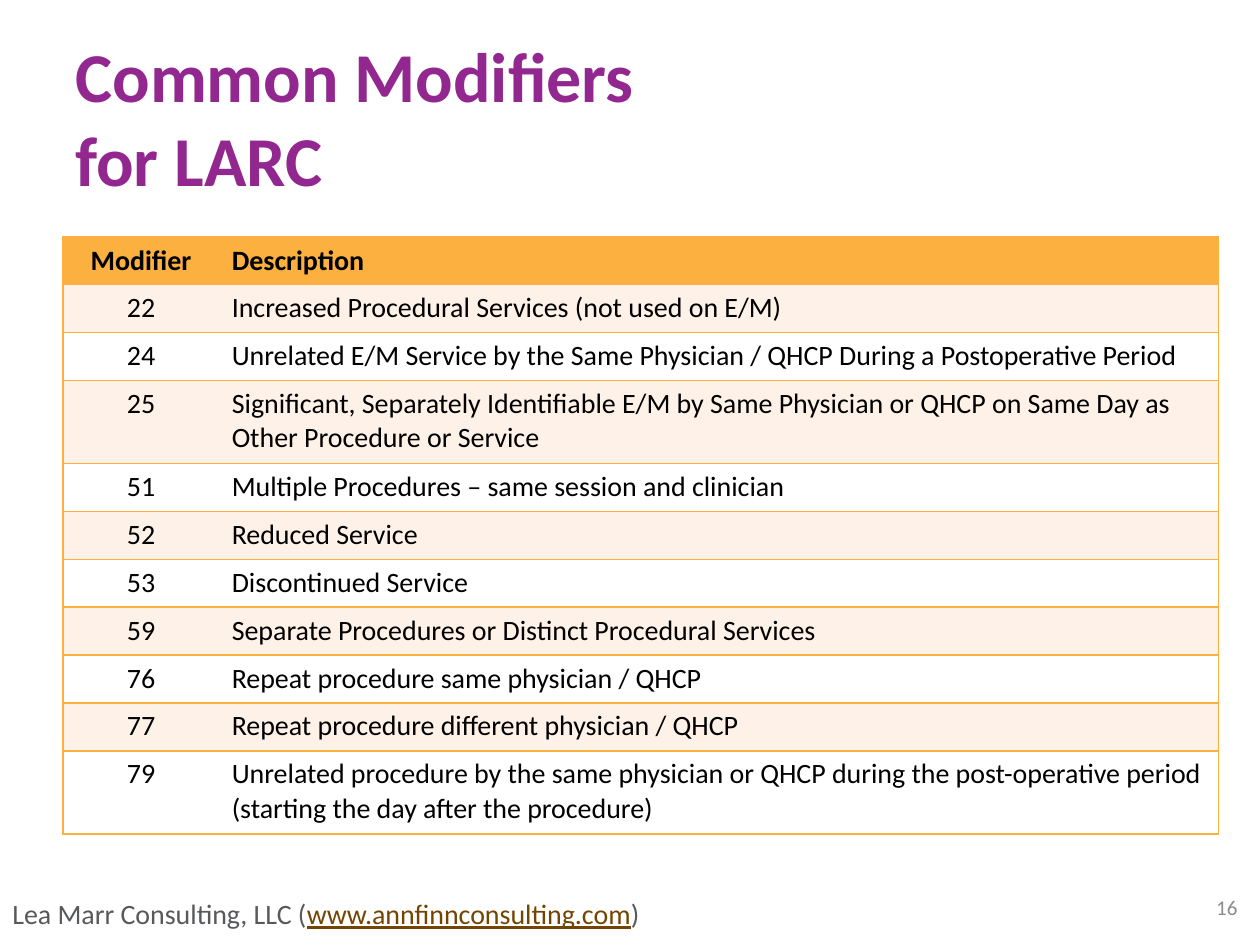
"""Build the slide listing common billing modifiers for LARC."""
from dataclasses import dataclass

from lxml import etree
from pptx import Presentation, util as u
from pptx.dml.color import RGBColor
from pptx.enum import text
from pptx.oxml.ns import qn


@dataclass(frozen=True)
class Theme:
    font: str = "Calibri"
    title: str = "92278F"
    accent: str = "FBB040"
    band: str = "FEF2E8"
    plain: str = "FFFFFF"
    ink: str = "000000"
    footer: str = "58595B"
    link: str = "734502"
    number: str = "8C8C8C"
    title_size: int = 40
    body_size: int = 16
    number_size: int = 12


theme = Theme()


def style(p, size, color, bold=False, align=text.PP_ALIGN.LEFT):
    p.alignment = align
    p.font.name = theme.font
    p.font.size = u.Pt(size)
    p.font.bold = bold
    p.font.color.rgb = RGBColor.from_string(color)


def add_text(left, top, width, height):
    tf = s.shapes.add_textbox(*map(u.Inches, (left, top, width, height))).text_frame
    tf.word_wrap = True
    tf.vertical_anchor = text.MSO_ANCHOR.MIDDLE
    return tf.paragraphs[0]


prs = Presentation()
prs.slide_width, prs.slide_height = u.Inches(10), u.Inches(7.5)
s = prs.slides.add_slide(prs.slide_layouts[6])

p = add_text(0.5, 0.3, 5.42, 1.25)
p.text = "Common Modifiers\vfor LARC"
style(p, theme.title_size, theme.title, bold=True)

rows = [
    ("Modifier", "Description"),
    ("22", "Increased Procedural Services (not used on E/M)"),
    ("24", "Unrelated E/M Service by the Same Physician / QHCP During a Postoperative Period"),
    ("25", "Significant, Separately Identifiable E/M by Same Physician or QHCP on Same Day as Other Procedure or Service"),
    ("51", "Multiple Procedures – same session and clinician"),
    ("52", "Reduced Service"),
    ("53", "Discontinued Service"),
    ("59", "Separate Procedures or Distinct Procedural Services"),
    ("76", "Repeat procedure same physician / QHCP"),
    ("77", "Repeat procedure different physician / QHCP"),
    ("79", "Unrelated procedure by the same physician or QHCP during the post-operative period (starting the day after the procedure)"),
]
two_line_rows = ("25", "79")
aligns = (text.PP_ALIGN.CENTER, text.PP_ALIGN.LEFT)
inner_edges = ("lnR", "lnL")

table = s.shapes.add_table(
    len(rows), 2, u.Inches(0.5), u.Inches(1.88), u.Inches(9.17), u.Inches(4.79)
).table
table.first_row = table.horz_banding = False
for column, width in zip(table.columns, (1.24, 7.93)):
    column.width = u.Inches(width)

for i, row in enumerate(rows):
    header = i == 0
    fill = theme.accent if header else theme.band if i % 2 else theme.plain
    table.rows[i].height = u.Inches(0.66 if row[0] in two_line_rows else 0.38)
    for j, value in enumerate(row):
        cell = table.cell(i, j)
        cell.vertical_anchor = text.MSO_ANCHOR.MIDDLE if header else text.MSO_ANCHOR.TOP
        p = cell.text_frame.paragraphs[0]
        p.text = value
        style(p, theme.body_size, theme.ink, header, aligns[j])
        tcPr = cell._tc.get_or_add_tcPr()
        for edge in ("lnL", "lnR", "lnT", "lnB"):
            ln = etree.SubElement(tcPr, qn(f"a:{edge}"), w=str(u.Pt(1)))
            if edge == inner_edges[j]:
                etree.SubElement(ln, qn("a:noFill"))
            else:
                solid = etree.SubElement(ln, qn("a:solidFill"))
                etree.SubElement(solid, qn("a:srgbClr"), val=theme.accent)
        cell.fill.solid()
        cell.fill.fore_color.rgb = RGBColor.from_string(fill)

p = add_text(0, 7, 7.33, 0.5)
style(p, theme.body_size, theme.footer)
for value, color, underline in (
    ("Lea Marr Consulting, LLC (", theme.footer, False),
    ("www.annfinnconsulting.com", theme.link, True),
    (")", theme.footer, False),
):
    r = p.add_run()
    r.text = value
    r.font.name = theme.font
    r.font.size = u.Pt(theme.body_size)
    r.font.underline = underline
    r.font.color.rgb = RGBColor.from_string(color)

p = add_text(9.42, 7, 0.5, 0.4)
p.text = "16"
style(p, theme.number_size, theme.number, align=text.PP_ALIGN.RIGHT)

prs.save("out.pptx")
